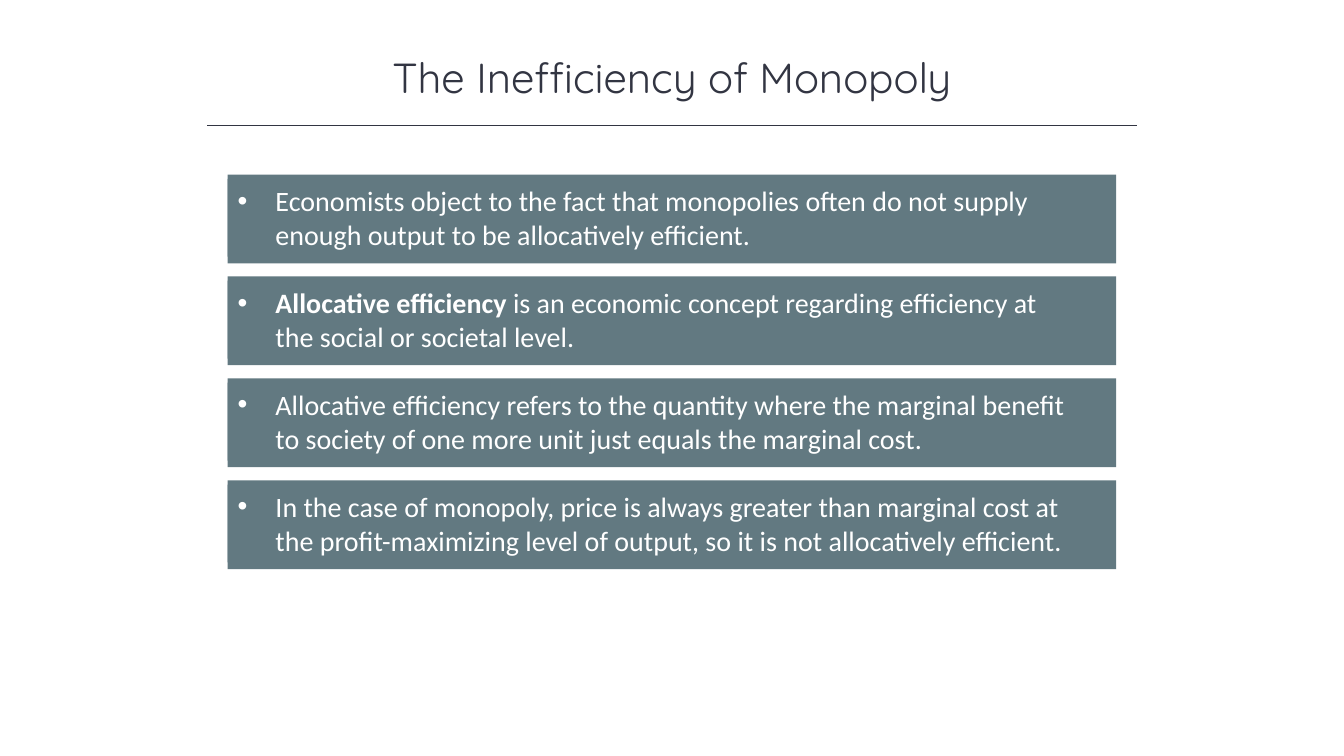
from dataclasses import dataclass

from lxml.etree import SubElement
from pptx import Presentation
from pptx.dml.color import RGBColor
from pptx.enum.shapes import MSO_CONNECTOR, MSO_SHAPE
from pptx.enum.text import MSO_ANCHOR, MSO_AUTO_SIZE, PP_ALIGN
from pptx.oxml.ns import qn
from pptx.shapes.autoshape import Shape
from pptx.shapes.shapetree import GroupShapes
from pptx.slide import Slide
from pptx.text.text import _Paragraph as Paragraph
from pptx.util import Pt


@dataclass(frozen=True)
class Theme:
    ink: RGBColor = RGBColor(0x32, 0x35, 0x42)
    panel: RGBColor = RGBColor(0x62, 0x79, 0x81)
    panel_text: RGBColor = RGBColor(0xFF, 0xFF, 0xFF)
    title_font: str = "Quicksand"
    body_font: str = "Calibri"
    title_size: float = 30
    body_size: float = 20
    rule_width: float = 1


@dataclass(frozen=True)
class Span:
    text: str
    bold: bool = False


@dataclass(frozen=True)
class Box:
    left: float
    top: float
    width: float
    height: float

    def lowered(self, distance: float) -> "Box":
        return Box(self.left, self.top + distance, self.width, self.height)

    def lengths(self) -> tuple[Pt, Pt, Pt, Pt]:
        return Pt(self.left), Pt(self.top), Pt(self.width), Pt(self.height)


THEME = Theme()
TITLE_BOX = Box(120, 33.1, 720, 44)
RULE_LEFT, RULE_RIGHT, RULE_Y = 148.2, 812.2, 89.5
PANEL_BOX = Box(162.7, 124.7, 634.5, 63.4)
TEXT_BOX = Box(162.7, 127.7, 614.9, 55.7)
PANEL_PITCH = 72.8
BULLET_INDENT = 27

POINTS: list[list[Span]] = [
    [Span("Economists object to the fact that monopolies often do not supply "
          "enough output to be allocatively efficient.")],
    [Span("Allocative efficiency ", bold=True),
     Span("is an economic concept regarding efficiency at the social or "
          "societal level.")],
    [Span("Allocative efficiency refers to the quantity where the marginal "
          "benefit to society of one more unit just equals the marginal cost.")],
    [Span("In the case of monopoly, price is always greater than marginal cost "
          "at the profit-maximizing level of output, so it is not allocatively "
          "efficient.")],
]


def add_run(p: Paragraph, span: Span, font: str, size: float,
            color: RGBColor) -> None:
    r = p.add_run()
    r.text = span.text
    r.font.name = font
    r.font.size = Pt(size)
    r.font.bold = span.bold
    r.font.color.rgb = color


def add_title(slide: Slide, text: str) -> None:
    tf = slide.shapes.add_textbox(*TITLE_BOX.lengths()).text_frame
    tf.word_wrap = True
    tf.auto_size = MSO_AUTO_SIZE.SHAPE_TO_FIT_TEXT
    p = tf.paragraphs[0]
    p.alignment = PP_ALIGN.CENTER
    add_run(p, Span(text), THEME.title_font, THEME.title_size, THEME.ink)


def add_rule(slide: Slide) -> None:
    line = slide.shapes.add_connector(
        MSO_CONNECTOR.STRAIGHT,
        Pt(RULE_LEFT), Pt(RULE_Y), Pt(RULE_RIGHT), Pt(RULE_Y))
    line.line.color.rgb = THEME.ink
    line.line.width = Pt(THEME.rule_width)
    SubElement(line._element.spPr, qn("a:effectLst"))


def add_rectangle(shapes: GroupShapes, box: Box) -> Shape:
    sp = shapes.add_shape(MSO_SHAPE.RECTANGLE, *box.lengths())
    sp.shadow.inherit = False
    sp.fill.solid()
    sp.fill.fore_color.rgb = THEME.panel
    sp.line.fill.background()
    return sp


def set_bullet(p: Paragraph) -> None:
    """Give the paragraph a round bullet with a hanging indent."""
    pPr = p._p.get_or_add_pPr()
    pPr.set("marL", str(Pt(BULLET_INDENT)))
    pPr.set("indent", str(-Pt(BULLET_INDENT)))
    SubElement(pPr, qn("a:buFont"), typeface="Arial")
    SubElement(pPr, qn("a:buChar"), char="•")


def add_point(slide: Slide, spans: list[Span], drop: float) -> None:
    """Group a panel with its bulleted text, drop points below the first."""
    shapes = slide.shapes.add_group_shape().shapes
    add_rectangle(shapes, PANEL_BOX.lowered(drop))
    tf = add_rectangle(shapes, TEXT_BOX.lowered(drop)).text_frame
    tf.word_wrap = True
    tf.auto_size = MSO_AUTO_SIZE.SHAPE_TO_FIT_TEXT
    tf.vertical_anchor = MSO_ANCHOR.TOP
    p = tf.paragraphs[0]
    p.alignment = PP_ALIGN.LEFT
    set_bullet(p)
    for span in spans:
        add_run(p, span, THEME.body_font, THEME.body_size, THEME.panel_text)


def main() -> None:
    prs = Presentation()
    prs.slide_width, prs.slide_height = Pt(960), Pt(540)
    slide = prs.slides.add_slide(prs.slide_layouts[6])
    add_title(slide, "The Inefficiency of Monopoly")
    add_rule(slide)
    for row, spans in enumerate(POINTS):
        add_point(slide, spans, row * PANEL_PITCH)
    prs.save("out.pptx")


if __name__ == "__main__":
    main()
